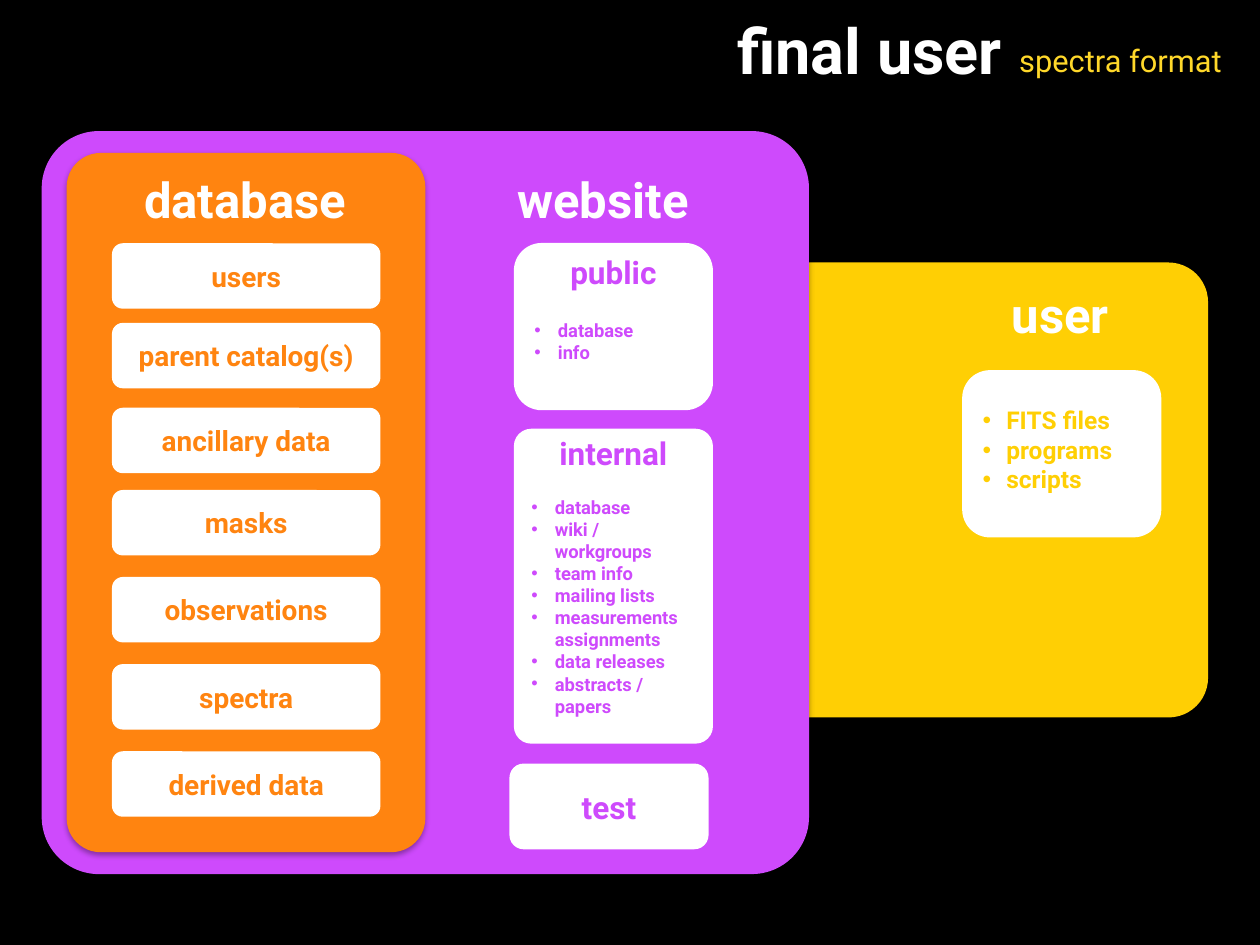
from copy import deepcopy
from dataclasses import dataclass

from lxml.etree import SubElement
from pptx import Presentation
from pptx.dml.color import RGBColor
from pptx.enum.shapes import MSO_SHAPE as Preset
from pptx.enum.text import MSO_ANCHOR as Anchor, PP_ALIGN as Align
from pptx.oxml.ns import qn
from pptx.util import Pt

"""Builds a slide of a database and website panel beside a user panel."""

WHITE, BLACK = "FFFFFF", "000000"
PURPLE, ORANGE, YELLOW, PALE_YELLOW = "CE4AFC", "FF8410", "FFCF04", "FFD82A"
BULLET_INDENT = 13.5


@dataclass
class Line:
    text: str
    size: float
    color: str
    align: Align = Align.CENTER
    bold: bool = True
    bullet: bool = False
    before: float = 0


@dataclass
class Card:
    left: float
    top: float
    width: float
    height: float
    fill: str = WHITE
    radius: float = 0.1667
    shadow: bool = False
    lines: tuple = ()
    bottom_inset: float = 3.6


@dataclass
class Label:
    left: float
    top: float
    width: float
    height: float
    line: Line
    anchor: Anchor = Anchor.TOP


def rgb(color: str) -> RGBColor:
    return RGBColor.from_string(color)


def bullets(items, size: float, color: str, before: float = 0) -> tuple:
    return tuple(
        Line(item, size, color, Align.LEFT, bullet=True, before=0 if index else before)
        for index, item in enumerate(items)
    )


def write_lines(frame, lines) -> None:
    for index, line in enumerate(lines):
        para = frame.add_paragraph() if index else frame.paragraphs[0]
        para.text = line.text
        para.alignment = line.align
        para.space_before = Pt(line.before)
        for span in para.runs:
            formats = {"name": "Roboto", "size": Pt(line.size), "bold": line.bold}
            for name, value in formats.items():
                setattr(span.font, name, value)
            span.font.color.rgb = rgb(line.color)
        for line_break in para._p.iterfind(qn("a:br")):
            line_break.append(deepcopy(para.runs[0]._r.rPr))
        if line.bullet:
            props = para._p.get_or_add_pPr()
            props.set("marL", str(Pt(BULLET_INDENT)))
            props.set("indent", str(-Pt(BULLET_INDENT)))
            SubElement(props, qn("a:buFont"), typeface="Arial")
            SubElement(props, qn("a:buChar"), char="•")


def add_shadow(box) -> None:
    effects = box._element.spPr.find(qn("a:effectLst"))
    outer = SubElement(
        effects, qn("a:outerShdw"), blurRad=str(Pt(3.1)), dist=str(Pt(1.8)),
        dir="5400000", rotWithShape="0",
    )
    color = SubElement(outer, qn("a:srgbClr"), val=BLACK)
    SubElement(color, qn("a:alpha"), val="35000")


def draw_card(page, card: Card) -> None:
    place = map(Pt, (card.left, card.top, card.width, card.height))
    box = page.shapes.add_shape(Preset.ROUNDED_RECTANGLE, *place)
    box.adjustments[0] = card.radius
    box.fill.solid()
    box.fill.fore_color.rgb = rgb(card.fill)
    box.line.fill.background()
    box.shadow.inherit = False
    if card.shadow:
        add_shadow(box)
    frame = box.text_frame
    formats = {
        "word_wrap": True,
        "vertical_anchor": Anchor.MIDDLE,
        "margin_bottom": Pt(card.bottom_inset),
    }
    for name, value in formats.items():
        setattr(frame, name, value)
    write_lines(frame, card.lines)


def draw_label(page, label: Label) -> None:
    place = map(Pt, (label.left, label.top, label.width, label.height))
    frame = page.shapes.add_textbox(*place).text_frame
    frame.word_wrap = True
    frame.vertical_anchor = label.anchor
    write_lines(frame, [label.line])


def heading(text: str, align: Align = Align.LEFT) -> Line:
    return Line(text, 28, WHITE, align)


TABLES = {
    "users": 139, "parent catalog(s)": 184.5, "ancillary data": 233, "masks": 280,
    "observations": 329.7, "spectra": 379.5, "derived data": 429.3,
}
PUBLIC = (Line("public", 18, PURPLE),) + bullets(("database", "info"), 10.5, PURPLE, 16.4)
INTERNAL = (Line("internal", 18, PURPLE),) + bullets(
    ("database", "wiki /\vworkgroups", "team info", "mailing lists",
     "measurements\vassignments", "data releases", "abstracts / papers"),
    10.5, PURPLE, 14.1,
)
FILES = bullets(("FITS files", "programs", "scripts"), 14, YELLOW)

CARDS = [
    Card(436.3, 150, 254, 260, YELLOW, 0.089),
    Card(549.8, 211.5, 113.8, 95.6, lines=FILES, bottom_inset=8.3),
    Card(23.8, 74.9, 438.5, 424.6, PURPLE, 0.077, True),
    Card(293.6, 138.8, 113.8, 95.6, lines=PUBLIC, bottom_inset=24.7),
    Card(293.6, 245, 113.8, 180, radius=0.088, lines=INTERNAL, bottom_inset=15.9),
    Card(38.1, 87.4, 205, 399.6, ORANGE, 0.095, True),
    *(Card(64, top, 153.4, 37.4, lines=(Line(name, 16, ORANGE),))
      for name, top in TABLES.items()),
    Card(291.1, 436.3, 113.8, 49, lines=(Line("test", 18, PURPLE),)),
]
LABELS = [
    Label(571, 159, 74.2, 41, heading("user")),
    Label(288.6, 93.6, 118, 41, heading("website")),
    Label(71.3, 93.6, 137.5, 41, heading("database", Align.CENTER)),
    Label(223.2, 0.7, 356.4, 55.4, Line("final user", 36, WHITE, Align.RIGHT), Anchor.MIDDLE),
    Label(575.3, 10.8, 144.7, 46.8,
          Line("spectra format", 17.6, PALE_YELLOW, Align.LEFT, False), Anchor.MIDDLE),
]


def main() -> None:
    deck = Presentation()
    deck.slide_width, deck.slide_height = Pt(720), Pt(540)
    page = deck.slides.add_slide(deck.slide_layouts[6])
    page.background.fill.solid()
    page.background.fill.fore_color.rgb = rgb(BLACK)
    for card in CARDS:
        draw_card(page, card)
    for label in LABELS:
        draw_label(page, label)
    deck.save("out.pptx")


if __name__ == "__main__":
    main()
